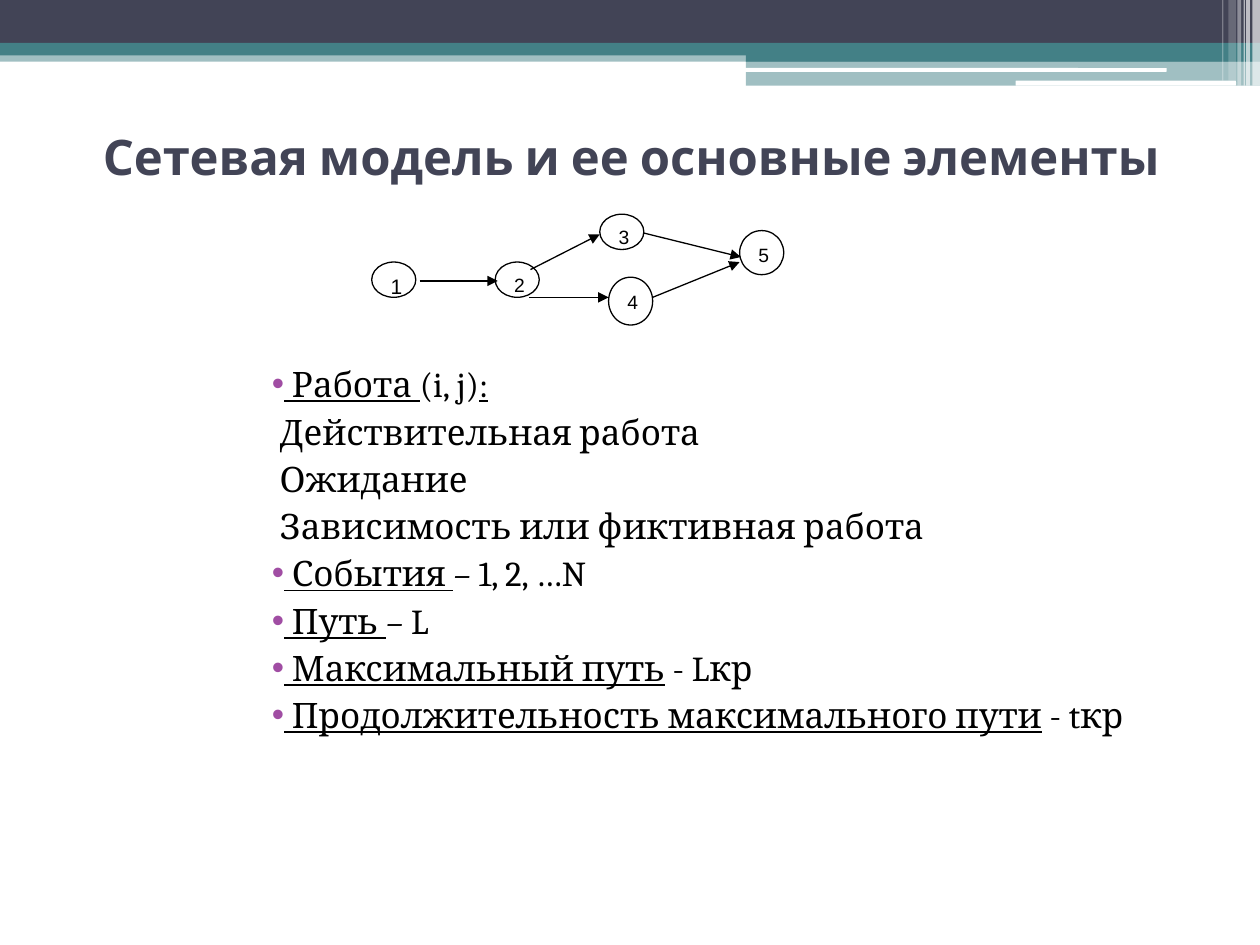
import dataclasses

import lxml.etree
import pptx
import pptx.dml.color
import pptx.enum.shapes
import pptx.enum.text
import pptx.oxml.ns
import pptx.util

SHAPES = pptx.enum.shapes.MSO_SHAPE


@dataclasses.dataclass(frozen=True)
class Theme:
    """Colours, fonts and type sizes of the deck."""
    dark: str = "424456"
    teal: str = "438086"
    white: str = "FFFFFF"
    black: str = "000000"
    bullet: str = "A04DA3"
    title_font: str = "Cabin"
    body_font: str = "Cambria"
    node_font: str = "Arial"
    title_size: int = 28
    body_size: int = 20
    node_size: int = 11
    first_node_size: int = 12
    line_width: float = 0.75


@dataclasses.dataclass(frozen=True)
class Box:
    """A rectangle in inches, divided into columns and rows."""
    left: float
    top: float
    width: float
    height: float
    columns: int = 1
    rows: int = 1

    def point(self, column, row):
        """Return the position of a grid crossing."""
        return (pptx.util.Inches(self.left + self.width * column / self.columns),
                pptx.util.Inches(self.top + self.height * row / self.rows))

    def area(self, column, row, across, down):
        """Return left, top, width and height of a block of cells."""
        return (*self.point(column, row),
                pptx.util.Inches(self.width * across / self.columns),
                pptx.util.Inches(self.height * down / self.rows))


THEME = Theme()


def rgb(value):
    """Return a colour object for a hex value."""
    return pptx.dml.color.RGBColor.from_string(value)


def add_element(parent, tag, **attributes):
    """Append an XML element with attributes."""
    child = lxml.etree.SubElement(parent, pptx.oxml.ns.qn(tag))
    for name, value in attributes.items():
        child.set(name, str(value))
    return child


def format_span(span, color, **values):
    """Set a span's colour and font values."""
    span.font.color.rgb = rgb(color)
    for name, value in values.items():
        setattr(span.font, name, value)


def add_filled(page, kind, area, color, opacity=100):
    """Add a shape with a plain fill and no line."""
    shape = page.shapes.add_shape(kind, *area)
    shape.shadow.inherit = False
    shape.fill.solid()
    shape.fill.fore_color.rgb = rgb(color)
    shape.line.fill.background()
    if opacity < 100:
        tint = shape.fill._xPr.find(".//" + pptx.oxml.ns.qn("a:srgbClr"))
        add_element(tint, "a:alpha", val=opacity * 1000)
    return shape


def add_header(page, box):
    """Draw the bands, rounded bars and light stripes at the top."""
    bands = [
        (0, 40, 1000, 9, THEME.teal, 50),
        (0, 0, 1000, 34, THEME.dark, 100),
        (0, 34, 1000, 10, THEME.teal, 100),
        (592, 39, 408, 10, THEME.teal, 100),
        (592, 48, 408, 20, THEME.teal, 50),
    ]
    bars = [(591, 54, 335, 3), (806, 64, 175, 4)]
    stripes = [(994, 6, 68, 65), (989, 3, 68, 65), (987, 1, 68, 60),
               (982, 3, 68, 40), (975, 6, 64, 20), (970, 1, 64, 30)]
    for *cells, color, opacity in bands:
        add_filled(page, SHAPES.RECTANGLE, box.area(*cells), color, opacity)
    for cells in bars:
        add_filled(page, SHAPES.ROUNDED_RECTANGLE, box.area(*cells), THEME.white)
    for column, across, down, opacity in stripes:
        add_filled(page, SHAPES.RECTANGLE, box.area(column, 0, across, down),
                   THEME.white, opacity)


def add_title(page, box, text):
    """Place and format the title."""
    title = page.shapes.title
    title.left, title.top, title.width, title.height = box.area(0, 0, 1, 1)
    frame = title.text_frame
    frame.word_wrap = True
    frame.vertical_anchor = pptx.enum.text.MSO_ANCHOR.MIDDLE
    para = frame.paragraphs[0]
    para.alignment = pptx.enum.text.PP_ALIGN.CENTER
    span = para.add_run()
    span.text = text
    format_span(span, THEME.dark, name=THEME.title_font,
                size=pptx.util.Pt(THEME.title_size), bold=True)


def add_node(page, area, label, size):
    """Draw one numbered event."""
    node = add_filled(page, SHAPES.OVAL, area, THEME.white)
    node.line.color.rgb = rgb(THEME.black)
    node.line.width = pptx.util.Pt(THEME.line_width)
    frame = node.text_frame
    frame.vertical_anchor = pptx.enum.text.MSO_ANCHOR.TOP
    para = frame.paragraphs[0]
    para.alignment = pptx.enum.text.PP_ALIGN.LEFT
    span = para.add_run()
    span.text = label
    format_span(span, THEME.black, name=THEME.node_font, size=pptx.util.Pt(size))


def add_arrow(page, start, end):
    """Draw one job as an arrow."""
    arrow = page.shapes.add_connector(
        pptx.enum.shapes.MSO_CONNECTOR.STRAIGHT, *start, *end)
    arrow.line.color.rgb = rgb(THEME.black)
    arrow.line.width = pptx.util.Pt(THEME.line_width)
    add_element(arrow.line._get_or_add_ln(), "a:tailEnd", type="triangle")
    add_element(arrow._element.spPr, "a:effectLst")


def add_network(page, box):
    """Draw the network of events and jobs."""
    nodes = [("1", 0, 38, 28), ("2", 98, 38, 28), ("3", 181, 0, 28),
             ("4", 188, 50, 38), ("5", 292, 13, 35)]
    arrows = [(38, 53, 100, 53), (126, 44, 181, 16), (125, 66, 188, 66),
              (216, 15, 293, 34), (223, 66, 292, 38)]
    for label, column, row, down in nodes:
        size = THEME.first_node_size if label == "1" else THEME.node_size
        add_node(page, box.area(column, row, 35, down), label, size)
    for column, row, end_column, end_row in arrows:
        add_arrow(page, box.point(column, row), box.point(end_column, end_row))


def add_terms(page, box, lines):
    """Write the terms; each line is a bullet flag and styled spans."""
    frame = page.shapes.add_textbox(*box.area(0, 0, 1, 1)).text_frame
    frame.word_wrap = True
    frame.margin_top = pptx.util.Inches(0.42)
    for index, (bulleted, spans) in enumerate(lines):
        para = frame.add_paragraph() if index else frame.paragraphs[0]
        para.space_before = pptx.util.Pt(3)
        layout = para._p.get_or_add_pPr()
        layout.set("marL", str(pptx.util.Inches(1.27)))
        layout.set("indent", str(pptx.util.Inches(0.29)))
        if bulleted:
            add_element(add_element(layout, "a:buClr"), "a:srgbClr", val=THEME.bullet)
            add_element(layout, "a:buFont", typeface=THEME.node_font)
            add_element(layout, "a:buChar", char="•")
        for text, style in spans:
            span = para.add_run()
            span.text = text
            format_span(span, THEME.black, name=THEME.body_font,
                        size=pptx.util.Pt(THEME.body_size), **style)


def main():
    """Build and save the deck."""
    deck = pptx.Presentation()
    deck.slide_width, deck.slide_height = pptx.util.Inches(10), pptx.util.Inches(7.5)
    page = deck.slides.add_slide(deck.slide_layouts.get_by_name("Title Only"))
    plain, under, italic = {}, {"underline": True}, {"italic": True}
    terms = [
        (True, [(" Работа ", under), ("(i, j)", plain), (":", under)]),
        (False, [(" Действительная работа", plain)]),
        (False, [(" Ожидание", plain)]),
        (False, [(" Зависимость или фиктивная работа", plain)]),
        (True, [(" События ", under), ("– ", italic), ("1, 2, …N", plain)]),
        (True, [(" Путь ", under), ("– ", italic), ("L", plain)]),
        (True, [(" Максимальный путь", under), (" - Lкр", plain)]),
        (True, [(" Продолжительность максимального пути", under), (" - tкр", plain)]),
    ]
    add_header(page, Box(0, 0, 10, 0.68, 1000, 68))
    add_title(page, Box(0.51, 0.76, 9, 0.95), "Сетевая модель и ее основные элементы")
    add_terms(page, Box(0.5, 2.46, 9, 4.73), terms)
    add_network(page, Box(2.95, 1.7, 3.27, 0.88, 327, 88))
    deck.save("out.pptx")


if __name__ == "__main__":
    main()
